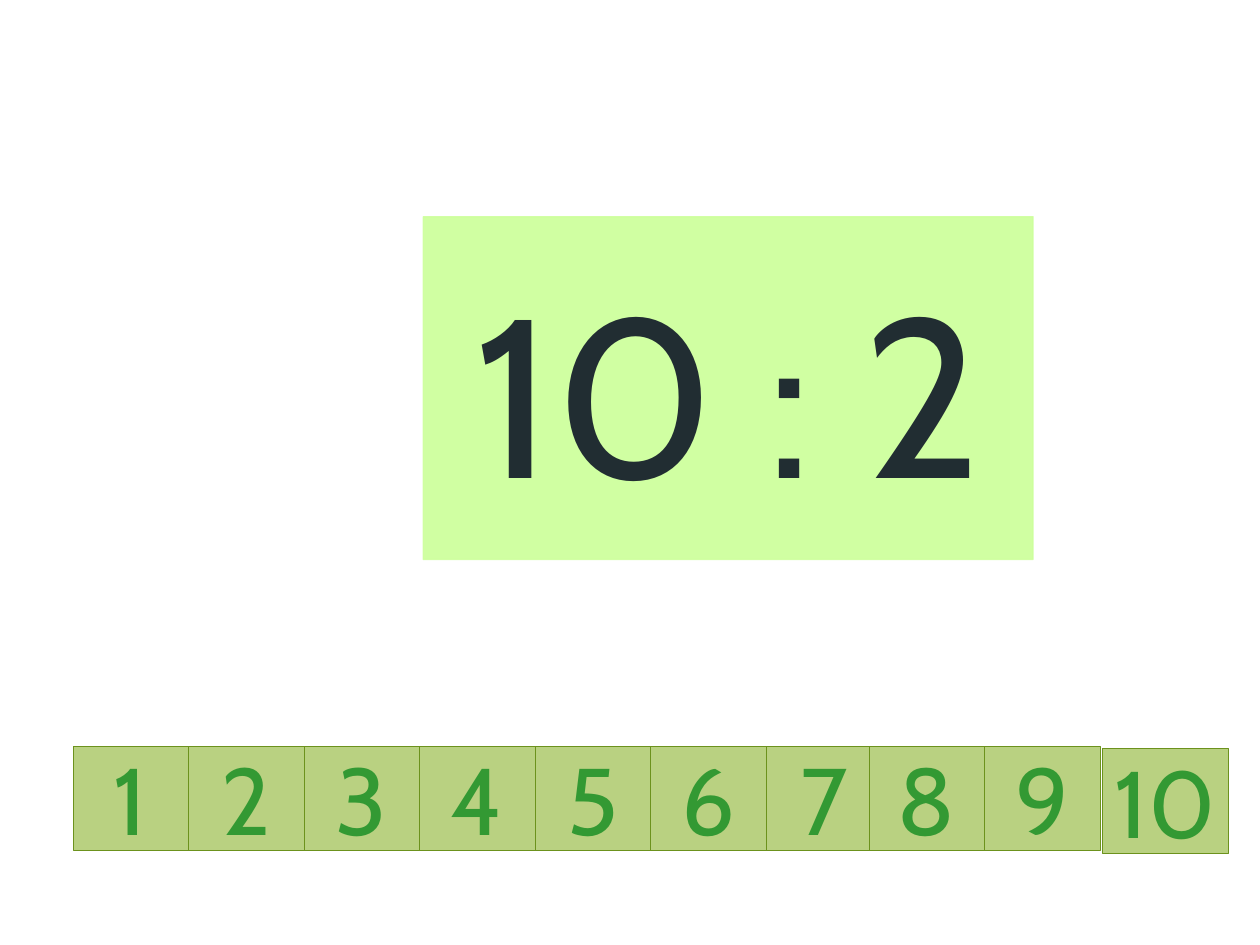
from lxml.etree import SubElement
from pptx import Presentation
from pptx.dml.color import RGBColor
from pptx.enum.shapes import MSO_SHAPE
from pptx.enum.text import MSO_ANCHOR, PP_ALIGN
from pptx.oxml.ns import qn
from pptx.util import Inches, Pt

OLIVE = RGBColor(0xB9, 0xD1, 0x81)
DARK_OLIVE = RGBColor(0x6C, 0x92, 0x1D)
GREEN = RGBColor(0x33, 0x99, 0x33)
LIME = RGBColor(0xCC, 0xFF, 0x99)
INK = RGBColor(0x21, 0x2D, 0x32)


def add_card(kind, box, fill, border, border_width, text, size, color):
    card = slide.shapes.add_shape(kind, *[Inches(length) for length in box])
    card.shadow.inherit = False
    card.fill.solid()
    card.fill.fore_color.rgb = fill
    card.line.color.rgb = border
    card.line.width = Pt(border_width)
    frame = card.text_frame
    frame.word_wrap = False
    frame.vertical_anchor = MSO_ANCHOR.MIDDLE
    paragraph = frame.paragraphs[0]
    paragraph.alignment = PP_ALIGN.CENTER
    run = paragraph.add_run()
    run.text = text
    run.font.name = "Cabin"
    run.font.size = Pt(size)
    run.font.color.rgb = color
    return card


presentation = Presentation()
presentation.slide_width = Inches(10)
presentation.slide_height = Inches(7.5)
slide = presentation.slides.add_slide(presentation.slide_layouts[6])

PITCH = 5.5 / 6
ROW_LEFT, ROW_TOP, KEY_HEIGHT = 0.58, 5.92, 0.83
OVERLAP = 0.1

keys = []
for number in range(1, 10):
    left = ROW_LEFT + (number - 1) * PITCH
    if number > 7:
        left -= OVERLAP
    keys.append((number, (left, ROW_TOP, PITCH, KEY_HEIGHT)))
keys.append((10, (8.75, 5.94, 1, KEY_HEIGHT)))

for number, box in keys:
    add_card(MSO_SHAPE.ACTION_BUTTON_CUSTOM, box, OLIVE, DARK_OLIVE, 0.25,
             str(number), 54, GREEN)

division = add_card(MSO_SHAPE.RECTANGLE, (3.36, 1.72, 4.84, 2.72), LIME, LIME, 0.75,
                    "10 : 2", 129, INK)
fill_color, border_color = division._element.spPr.iter(qn("a:srgbClr"))
SubElement(fill_color, qn("a:alpha"), val="91000")
SubElement(border_color, qn("a:alpha"), val="81000")

presentation.save("out.pptx")
